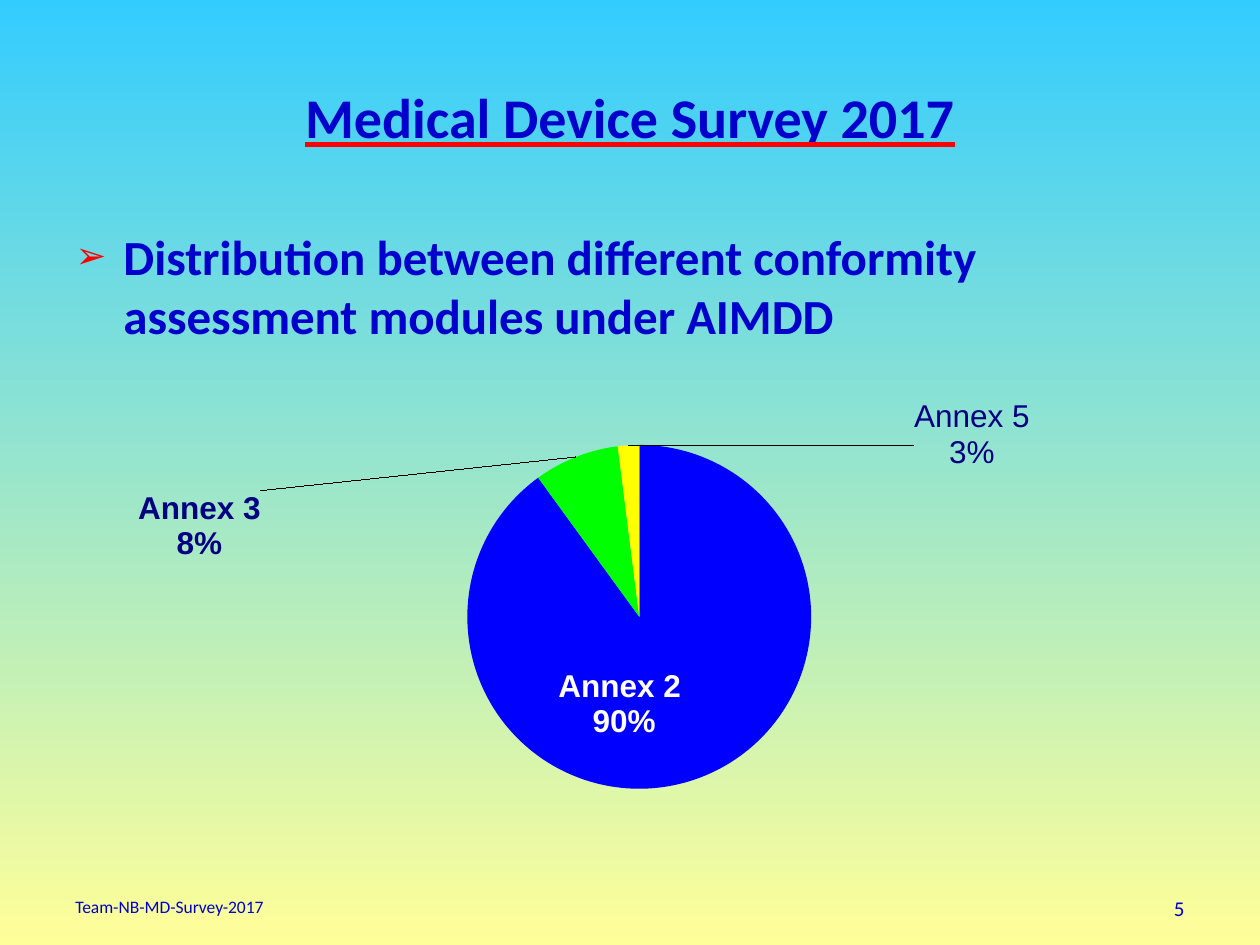
from dataclasses import dataclass

from lxml.etree import SubElement
from pptx import Presentation
from pptx.chart.data import CategoryChartData
from pptx.dml.color import RGBColor
from pptx.enum.chart import XL_CHART_TYPE, XL_LABEL_POSITION
from pptx.enum.text import MSO_ANCHOR, MSO_AUTO_SIZE, PP_ALIGN
from pptx.oxml import parse_xml
from pptx.oxml.ns import nsdecls, qn
from pptx.util import Inches, Pt


@dataclass(frozen=True)
class Theme:
    face: str = "Calibri"
    chart_face: str = "Arial"
    text: str = "0000CC"
    accent: str = "FF0000"
    label: str = "000080"
    white: str = "FFFFFF"
    black: str = "000000"
    sky: str = "33CCFF"
    sand: str = "FFFF99"
    slices: tuple = ("0000FF", "00FF00", "FFFFFF", "FFFF00")
    title_size: int = 32
    body_size: int = 28
    label_size: int = 18
    page_size: int = 12
    foot_size: int = 10


THEME = Theme()


def color(code):
    return RGBColor.from_string(code)


def style(font, size, code, bold=False, face=THEME.face):
    font.name = face
    font.size = Pt(size)
    font.bold = bold
    font.color.rgb = color(code)


def place(shape, left, top, width, height):
    shape.left, shape.top = Inches(left), Inches(top)
    shape.width, shape.height = Inches(width), Inches(height)


def paint_back(slide):
    fill = slide.background.fill
    fill.gradient()
    fill.gradient_angle = 270
    for stop, code in zip(fill.gradient_stops, (THEME.sky, THEME.sand)):
        stop.color.rgb = color(code)


def add_title(slide, text):
    title = slide.shapes.title
    place(title, 0.5, 0.3, 9, 1.25)
    frame = title.text_frame
    frame.text = text
    frame.auto_size = MSO_AUTO_SIZE.NONE
    frame.vertical_anchor = MSO_ANCHOR.MIDDLE
    para = frame.paragraphs[0]
    para.alignment = PP_ALIGN.CENTER
    font = para.runs[0].font
    style(font, THEME.title_size, THEME.text, True)
    font.underline = True
    props = para.runs[0]._r.get_or_add_rPr()
    props.find(qn("a:latin")).addprevious(parse_xml(
        f'<a:uFill {nsdecls("a")}><a:solidFill>'
        f'<a:srgbClr val="{THEME.accent}"/></a:solidFill></a:uFill>'))


def add_bullet(para, mark):
    props = para._p.get_or_add_pPr()
    indent = Inches(0.38)
    props.set("marL", str(indent))
    props.set("indent", str(-indent))
    tint = SubElement(props, qn("a:buClr"))
    SubElement(tint, qn("a:srgbClr"), val=THEME.accent)
    SubElement(props, qn("a:buSzPct"), val="75000")
    SubElement(props, qn("a:buFont"), typeface=THEME.chart_face)
    SubElement(props, qn("a:buChar"), char=mark)


def add_body(slide, text):
    body = slide.placeholders[1]
    place(body, 0.5, 1.75, 9, 0.82)
    frame = body.text_frame
    frame.text = text
    frame.auto_size = MSO_AUTO_SIZE.NONE
    para = frame.paragraphs[0]
    para.space_before = Pt(0)
    add_bullet(para, "➢")
    style(para.runs[0].font, THEME.body_size, THEME.text, True)


def add_note(slide, text, left, width, size, align):
    box = slide.shapes.add_textbox(
        Inches(left), Inches(7.06), Inches(width), Inches(0.29))
    frame = box.text_frame
    frame.word_wrap = True
    frame.text = text
    para = frame.paragraphs[0]
    para.alignment = align
    style(para.runs[0].font, size, THEME.text)


def set_layout(parent, **values):
    """Fill a c:layout element with a manual layout."""
    manual = SubElement(parent, qn("c:manualLayout"))
    for key, value in values.items():
        SubElement(manual, qn(f"c:{key}"), val=str(value))


def show_parts(node, shown):
    """Show category and percentage, one above the other, or nothing."""
    for key in ("Val", "CatName", "Percent"):
        on = shown and key != "Val"
        node.find(qn(f"c:show{key}")).set("val", str(int(on)))
    mark = parse_xml(f'<c:separator {nsdecls("c")}>\n</c:separator>')
    node.find(qn("c:showPercent")).addnext(mark)
    bubble = node.find(qn("c:showBubbleSize"))
    if bubble is not None:
        bubble.addnext(mark)


def add_label(point, code, spot, shift, text=None):
    label = point.data_label
    if text:
        frame = label.text_frame
        frame.text = text
        for para in frame.paragraphs:
            style(para.runs[0].font, THEME.label_size, code,
                  face=THEME.chart_face)
    else:
        style(label.font, THEME.label_size, code, True, THEME.chart_face)
    label.position = spot
    node = label._dLbl
    show_parts(node, True)
    layout = parse_xml(f'<c:layout {nsdecls("c")}/>')
    node.find(qn("c:idx")).addnext(layout)
    set_layout(layout, x=shift[0], y=shift[1])


def add_pie(slide):
    data = CategoryChartData()
    data.categories = ["Annex 2 ", "Annex 3", "Annex 4", "Annex 5"]
    data.add_series("Series 1", (90, 8, 0, 2))
    chart = slide.shapes.add_chart(
        XL_CHART_TYPE.PIE, Inches(0.98), Inches(2.77),
        Inches(8.27), Inches(4.21), data).chart
    chart.has_legend = chart.has_title = False
    style(chart.font, 10, THEME.black, face=THEME.chart_face)
    area = chart._chartSpace.chart.plotArea
    layout = area.find(qn("c:layout"))
    if layout is None:
        layout = parse_xml(f'<c:layout {nsdecls("c")}/>')
        area.insert(0, layout)
    set_layout(layout, layoutTarget="inner", xMode="edge", yMode="edge",
               x=0.33, y=0.18, w=0.33, h=0.65)

    plot = chart.plots[0]
    plot.vary_by_categories = True
    series = plot.series[0]
    for index, code in enumerate(THEME.slices):
        fill = series.points[index].format.fill
        fill.solid()
        fill.fore_color.rgb = color(code)

    labels = series.data_labels
    style(labels.font, THEME.label_size, THEME.label, True, THEME.chart_face)
    labels.number_format = "0%"
    labels.number_format_is_linked = False
    show_parts(labels._element, True)
    outer = XL_LABEL_POSITION.OUTSIDE_END
    points = series.points
    add_label(points[0], THEME.white, XL_LABEL_POSITION.CENTER, (-0.04, 0.01))
    add_label(points[1], THEME.label, outer, (-0.3, 0.21))
    show_parts(points[2].data_label._get_or_add_dLbl(), False)
    add_label(points[3], THEME.label, outer, (0.33, 0.06), "Annex 5\n3%")


def main():
    deck = Presentation()
    deck.slide_width, deck.slide_height = Inches(10), Inches(7.5)
    slide = deck.slides.add_slide(deck.slide_layouts[1])
    paint_back(slide)
    add_title(slide, "Medical Device Survey 2017")
    add_body(slide, "Distribution between different conformity "
                    "assessment modules under AIMDD")
    add_pie(slide)
    add_note(slide, "Team-NB-MD-Survey-2017", 0.5, 3.17,
             THEME.foot_size, PP_ALIGN.LEFT)
    add_note(slide, "5", 7.17, 2.33, THEME.page_size, PP_ALIGN.RIGHT)
    deck.save("out.pptx")


if __name__ == "__main__":
    main()
